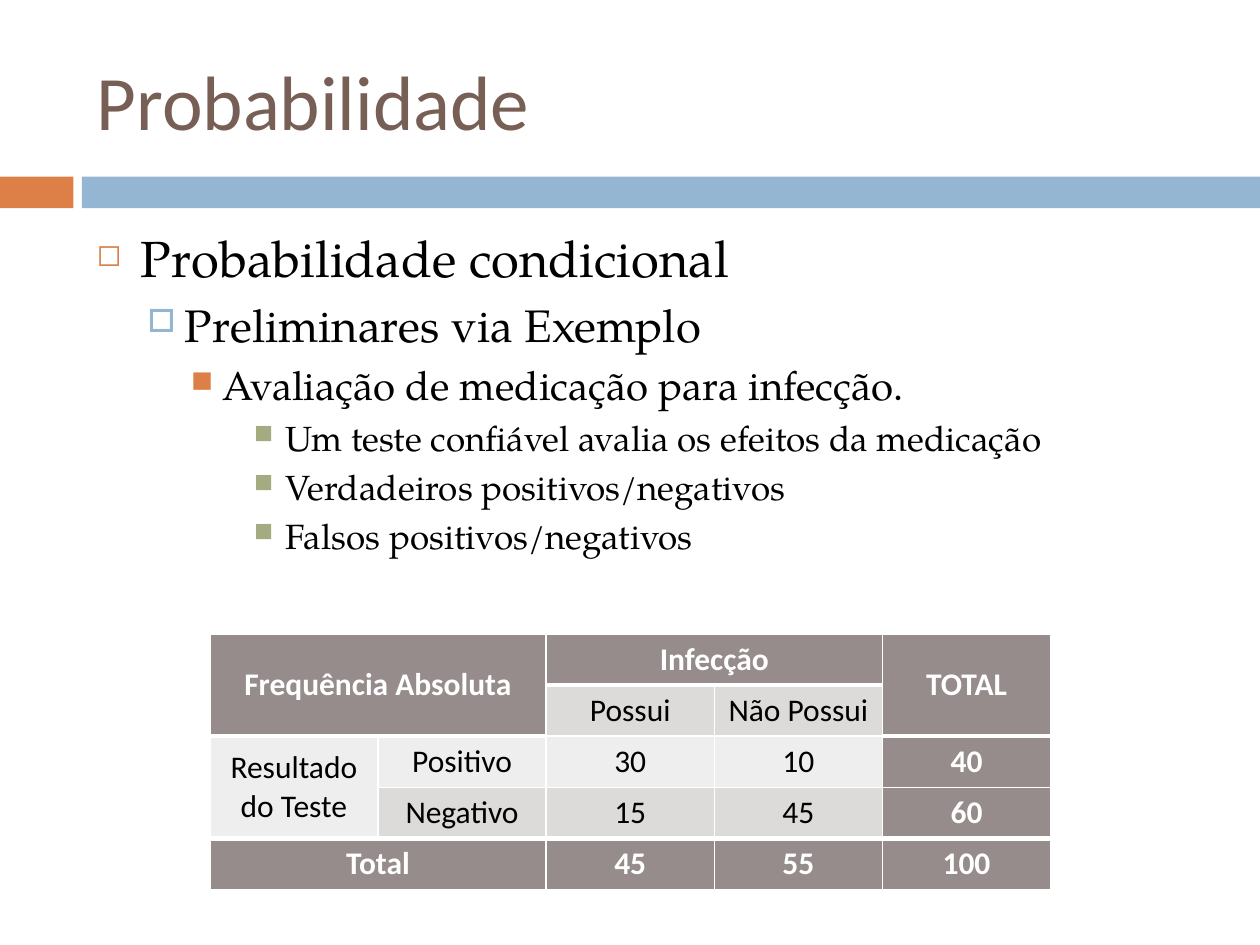
from dataclasses import dataclass

from lxml import etree
from pptx import Presentation
from pptx.dml.color import RGBColor
from pptx.enum.shapes import MSO_SHAPE
from pptx.enum.text import MSO_ANCHOR, PP_ALIGN
from pptx.oxml.ns import qn
from pptx.util import Cm, Pt

RECTANGLE = MSO_SHAPE.RECTANGLE
MIDDLE, TOP = MSO_ANCHOR.MIDDLE, MSO_ANCHOR.TOP
LEFT, CENTER = PP_ALIGN.LEFT, PP_ALIGN.CENTER

BLACK = RGBColor(0x00, 0x00, 0x00)
WHITE = RGBColor(0xFF, 0xFF, 0xFF)
BROWN = RGBColor(0x77, 0x5F, 0x55)
ORANGE = RGBColor(0xDD, 0x80, 0x47)
BLUE = RGBColor(0x94, 0xB6, 0xD2)
GREEN = RGBColor(0xA5, 0xAB, 0x81)
HEADER_GRAY = RGBColor(0x96, 0x8C, 0x8C)
BAND_DARK = RGBColor(0xDD, 0xDA, 0xDA)
BAND_LIGHT = RGBColor(0xEF, 0xEE, 0xEE)

HEADING_FONT = "Calibri"
BODY_FONT = "TeX Gyre Pagella"


@dataclass(frozen=True)
class Bar:
    left: float
    width: float
    color: RGBColor


@dataclass(frozen=True)
class BulletStyle:
    symbol: str
    color: RGBColor
    percent: int
    margin: float
    hanging: float
    space_before: float
    size: int


@dataclass(frozen=True)
class Span:
    row: int
    column: int
    rows: int
    columns: int


BARS = (Bar(0, 1.48, ORANGE), Bar(1.65, 23.75, BLUE))

BULLET_STYLES = (
    BulletStyle("◻", ORANGE, 60, 0.89, 0.89, 7, 29),
    BulletStyle("□", BLUE, 70, 1.78, 0.76, 5.5, 26),
    BulletStyle("■", ORANGE, 75, 2.54, 0.64, 5, 23),
    BulletStyle("■", GREEN, 75, 3.81, 0.64, 4, 20),
)

OUTLINE = (
    (0, "Probabilidade condicional"),
    (1, "Preliminares via Exemplo"),
    (2, "Avaliação de medicação para infecção."),
    (3, "Um teste confiável avalia os efeitos da medicação"),
    (3, "Verdadeiros positivos/negativos"),
    (3, "Falsos positivos/negativos"),
)

FREQUENCIES = (
    ("Frequência Absoluta", "", "Infecção", "", "TOTAL"),
    ("", "", "Possui", "Não Possui", ""),
    ("Resultado do Teste", "Positivo", "30", "10", "40"),
    ("", "Negativo", "15", "45", "60"),
    ("Total", "", "45", "55", "100"),
)
SPANS = (Span(0, 0, 2, 2), Span(0, 2, 1, 2), Span(0, 4, 2, 1), Span(2, 0, 2, 1), Span(4, 0, 1, 2))
ROW_COUNT, COLUMN_COUNT = len(FREQUENCIES), len(FREQUENCIES[0])
ROW_HEIGHT, COLUMN_WIDTH = Cm(1.03), Cm(3.39)
THICK_LINES = {(1, 2), (1, 3), (2, 0), (2, 1), (2, 4)} | {(4, column) for column in range(COLUMN_COUNT)}


def write_text(paragraph, text: str, *, size: float, font: str, color: RGBColor,
               bold: bool = False, align=LEFT) -> None:
    paragraph.alignment = align
    run = paragraph.add_run()
    run.text = text
    run.font.size = Pt(size)
    run.font.name = font
    run.font.color.rgb = color
    run.font.bold = bold


def add_bar(slide, bar: Bar) -> None:
    shape = slide.shapes.add_shape(RECTANGLE, Cm(bar.left), Cm(3.56), Cm(bar.width), Cm(0.64))
    shape.shadow.inherit = False
    shape.fill.solid()
    shape.fill.fore_color.rgb = bar.color
    shape.line.fill.background()


def add_text_frame(slide, top: float, height: float, anchor):
    frame = slide.shapes.add_textbox(Cm(1.7), Cm(top), Cm(22.66), Cm(height)).text_frame
    frame.word_wrap = True
    frame.vertical_anchor = anchor
    return frame


def add_bullet(paragraph, style: BulletStyle) -> None:
    paragraph.space_before = Pt(style.space_before)
    properties = paragraph._p.get_or_add_pPr()
    properties.set("marL", str(Cm(style.margin)))
    properties.set("indent", str(-Cm(style.hanging)))
    color = etree.SubElement(properties, qn("a:buClr"))
    etree.SubElement(color, qn("a:srgbClr"), val=str(style.color))
    etree.SubElement(properties, qn("a:buSzPct"), val=str(style.percent * 1000))
    etree.SubElement(properties, qn("a:buChar"), char=style.symbol)


def add_outline(slide) -> None:
    frame = add_text_frame(slide, 4.45, 13.28, TOP)
    for index, (level, text) in enumerate(OUTLINE):
        paragraph = frame.add_paragraph() if index else frame.paragraphs[0]
        style = BULLET_STYLES[level]
        paragraph.level = level
        add_bullet(paragraph, style)
        write_text(paragraph, text, size=style.size, font=BODY_FONT, color=BLACK)


def add_borders(cell, row: int, column: int) -> None:
    bottom = row + (cell.span_height if cell.is_merge_origin else 1)
    top_width = 3 if (row, column) in THICK_LINES else 1
    bottom_width = 3 if (bottom, column) in THICK_LINES else 1
    properties = cell._tc.get_or_add_tcPr()
    for edge, width in (("L", 1), ("R", 1), ("T", top_width), ("B", bottom_width)):
        line = etree.SubElement(properties, qn(f"a:ln{edge}"), w=str(Pt(width)))
        fill = etree.SubElement(line, qn("a:solidFill"))
        etree.SubElement(fill, qn("a:srgbClr"), val=str(WHITE))


def fill_cell(cell, row: int, column: int) -> None:
    is_header = row in (0, 4) or column == 4 or (row == 1 and column < 2)
    band = BAND_DARK if row % 2 else BAND_LIGHT
    add_borders(cell, row, column)
    cell.fill.solid()
    cell.fill.fore_color.rgb = HEADER_GRAY if is_header else band
    cell.vertical_anchor = MIDDLE
    if not cell.is_spanned:
        write_text(cell.text_frame.paragraphs[0], FREQUENCIES[row][column], size=18, font=HEADING_FONT,
                   color=WHITE if is_header else BLACK, bold=is_header, align=CENTER)


def add_frequency_table(slide) -> None:
    table = slide.shapes.add_table(ROW_COUNT, COLUMN_COUNT, Cm(4.23), Cm(12.78),
                                   COLUMN_WIDTH * COLUMN_COUNT, ROW_HEIGHT * ROW_COUNT).table
    for table_row in table.rows:
        table_row.height = ROW_HEIGHT
    for table_column in table.columns:
        table_column.width = COLUMN_WIDTH
    for span in SPANS:
        last = table.cell(span.row + span.rows - 1, span.column + span.columns - 1)
        table.cell(span.row, span.column).merge(last)
    for row in range(ROW_COUNT):
        for column in range(COLUMN_COUNT):
            fill_cell(table.cell(row, column), row, column)


def main() -> None:
    """Build the conditional probability slide and save it."""
    presentation = Presentation()
    presentation.slide_width = Cm(25.4)
    presentation.slide_height = Cm(19.05)
    slide = presentation.slides.add_slide(presentation.slide_layouts[6])
    for bar in BARS:
        add_bar(slide, bar)
    title = add_text_frame(slide, 0.64, 2.74, MIDDLE)
    write_text(title.paragraphs[0], "Probabilidade", size=44, font=HEADING_FONT, color=BROWN)
    add_outline(slide)
    add_frequency_table(slide)
    presentation.save("out.pptx")


if __name__ == "__main__":
    main()
